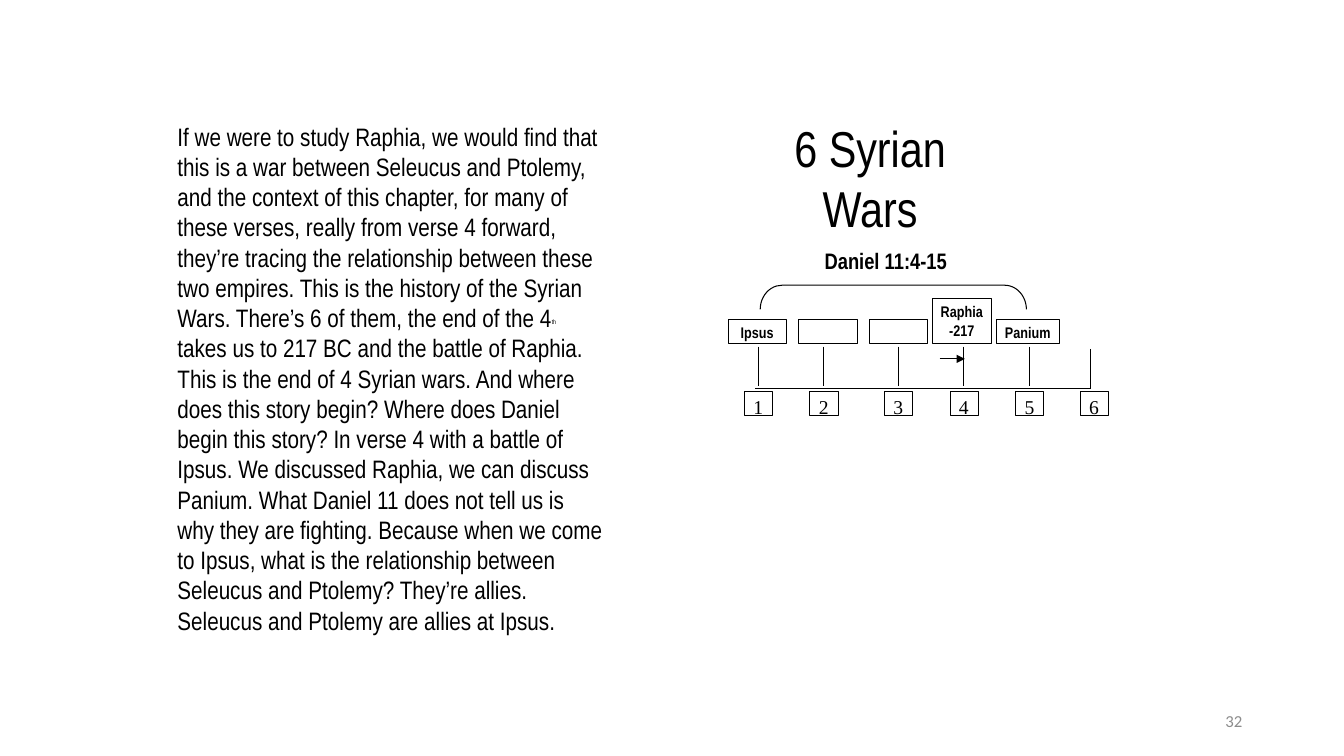
from pptx import Presentation
from pptx.dml.color import RGBColor
from pptx.enum.shapes import MSO_CONNECTOR, MSO_SHAPE
from pptx.enum.text import MSO_ANCHOR, MSO_AUTO_SIZE, PP_ALIGN
from pptx.oxml.ns import qn
from pptx.util import Inches, Pt
from lxml.etree import SubElement

BLACK, GREY = "000000", "8C8C8C"
NARROW, SERIF = "Arial Narrow", "Times New Roman"

TITLE = "6 Syrian Wars"
STORY = [
    "If we were to study Raphia, we would find that this is a war between Seleucus and "
    "Ptolemy, and the context of this chapter, for many of these verses, really from verse 4 "
    "forward, they’re tracing the relationship between these two empires. This is the history "
    "of the Syrian Wars. There’s 6 of them, the end of the 4",
    "th",
    " takes us to 217 BC and the battle of Raphia. This is the end of 4 Syrian wars. And where "
    "does this story begin? Where does Daniel begin this story? In verse 4 with a battle of "
    "Ipsus. We discussed Raphia, we can discuss Panium. What Daniel 11 does not tell us is why "
    "they are fighting. Because when we come to Ipsus, what is the relationship between "
    "Seleucus and Ptolemy? They’re allies. Seleucus and Ptolemy are allies at Ipsus.",
]
# Centre of each war on the timeline
WARS = [7.52, 8.17, 8.91, 9.56, 10.21, 10.85]
# Battle name, left, top, width, height
BATTLES = [
    ("Ipsus", 7.22, 3.17, 0.58, 0.24),
    ("", 7.92, 3.17, 0.58, 0.24),
    ("", 8.62, 3.17, 0.58, 0.24),
    ("Raphia\n-217", 9.25, 2.96, 0.58, 0.45),
    ("Panium", 9.88, 3.17, 0.63, 0.24),
]
AXIS_START, AXIS_END, AXIS_Y = 7.49, 10.82, 3.85
TICK_TOP, TICK_HEIGHT = 3.44, 0.39
NUMBER_WIDTH, NUMBER_HEIGHT, NUMBER_TOP = 0.28, 0.24, 3.88


def color(value):
    return RGBColor.from_string(value)


def style_text(frame, font, size, align, bold=False, ink=BLACK):
    for para in frame.paragraphs:
        para.alignment = align
        for span in para.runs:
            span.font.name, span.font.size, span.font.bold = font, Pt(size), bold
            span.font.color.rgb = color(ink)


def place(shape, left, top, width, height):
    shape.left, shape.top = Inches(left), Inches(top)
    shape.width, shape.height = Inches(width), Inches(height)


def tighten(frame, inset=0.04):
    frame.margin_left = frame.margin_right = Inches(inset)
    frame.margin_top = frame.margin_bottom = Inches(inset)
    frame.word_wrap = True
    frame.vertical_anchor = MSO_ANCHOR.TOP


def outline(kind, left, top, width, height, line_width=0.25):
    """Add an unfilled black-edged shape."""
    shape = page.shapes.add_shape(
        kind, Inches(left), Inches(top), Inches(width), Inches(height))
    shape.shadow.inherit = False
    shape.fill.background()
    shape.line.color.rgb = color(BLACK)
    shape.line.width = Pt(line_width)
    return shape


def add_box(text, left, top, width, height, font, size, bold=False):
    box = outline(MSO_SHAPE.RECTANGLE, left, top, width, height)
    if text:
        box.text_frame.text = text
        tighten(box.text_frame)
        style_text(box.text_frame, font, size, PP_ALIGN.CENTER, bold)


def add_label(text, left, top, width, height):
    label = page.shapes.add_textbox(
        Inches(left), Inches(top), Inches(width), Inches(height))
    label.text_frame.text = text
    tighten(label.text_frame)
    return label.text_frame


def add_line(x1, y1, x2, y2, arrow=False):
    line = page.shapes.add_connector(
        MSO_CONNECTOR.STRAIGHT, Inches(x1), Inches(y1), Inches(x2), Inches(y2))
    line.line.color.rgb = color(BLACK)
    line.line.width = Pt(0.75)
    if arrow:
        SubElement(line.line._get_or_add_ln(), qn("a:tailEnd"), type="triangle")
    SubElement(line._element.spPr, qn("a:effectLst"))


deck = Presentation()
deck.slide_width, deck.slide_height = Inches(13.33), Inches(7.5)
page = deck.slides.add_slide(deck.slide_layouts[1])

title = page.shapes.title
place(title, 7.67, 1.11, 1.92, 1.3)
title.text_frame.text = TITLE
title.text_frame.word_wrap = False
title.text_frame.auto_size = MSO_AUTO_SIZE.NONE
title.text_frame.vertical_anchor = MSO_ANCHOR.TOP
style_text(title.text_frame, NARROW, 36, PP_ALIGN.CENTER)

body = page.placeholders[1]
place(body, 1.66, 1.15, 4.45, 5.45)
body.text_frame.auto_size = MSO_AUTO_SIZE.NONE
story = body.text_frame.paragraphs[0]
for part in STORY:
    story.add_run().text = part
style_text(body.text_frame, NARROW, 18, PP_ALIGN.LEFT)
story.space_before = Pt(0)
properties = story._p.get_or_add_pPr()
properties.set("marL", "0")
properties.set("indent", "0")
SubElement(properties, qn("a:buNone"))
ordinal = story.runs[1]
ordinal.font.size = Pt(8)
ordinal.font._element.set("baseline", "30000")

for name, *area in BATTLES:
    add_box(name, *area, NARROW, 11, bold=True)

add_line(AXIS_START, AXIS_Y, AXIS_END, AXIS_Y)
for number, center in enumerate(WARS, 1):
    add_box(str(number), center - NUMBER_WIDTH / 2, NUMBER_TOP,
            NUMBER_WIDTH, NUMBER_HEIGHT, SERIF, 14)
    is_last = number == len(WARS)
    tick_x = AXIS_END if is_last else center
    tick_top = AXIS_Y - TICK_HEIGHT if is_last else TICK_TOP
    add_line(tick_x, tick_top, tick_x, tick_top + TICK_HEIGHT)
add_line(9.32, 3.56, 9.57, 3.56, arrow=True)

bracket = outline(MSO_SHAPE.LEFT_BRACKET, 8.74, 1.63, 0.24, 2.64, 0.75)
bracket.rotation = 90
bracket.adjustments[0] = 0.9

passage = add_label("Daniel 11:4-15", 7.93, 2.41, 1.71, 0.37)
style_text(passage, NARROW, 16, PP_ALIGN.CENTER, bold=True)

page_number = add_label("32", 9.42, 6.95, 3, 0.4)
page_number.margin_right = Inches(0.1)
page_number.vertical_anchor = MSO_ANCHOR.MIDDLE
style_text(page_number, "Calibri", 12, PP_ALIGN.RIGHT, ink=GREY)

deck.save("out.pptx")
